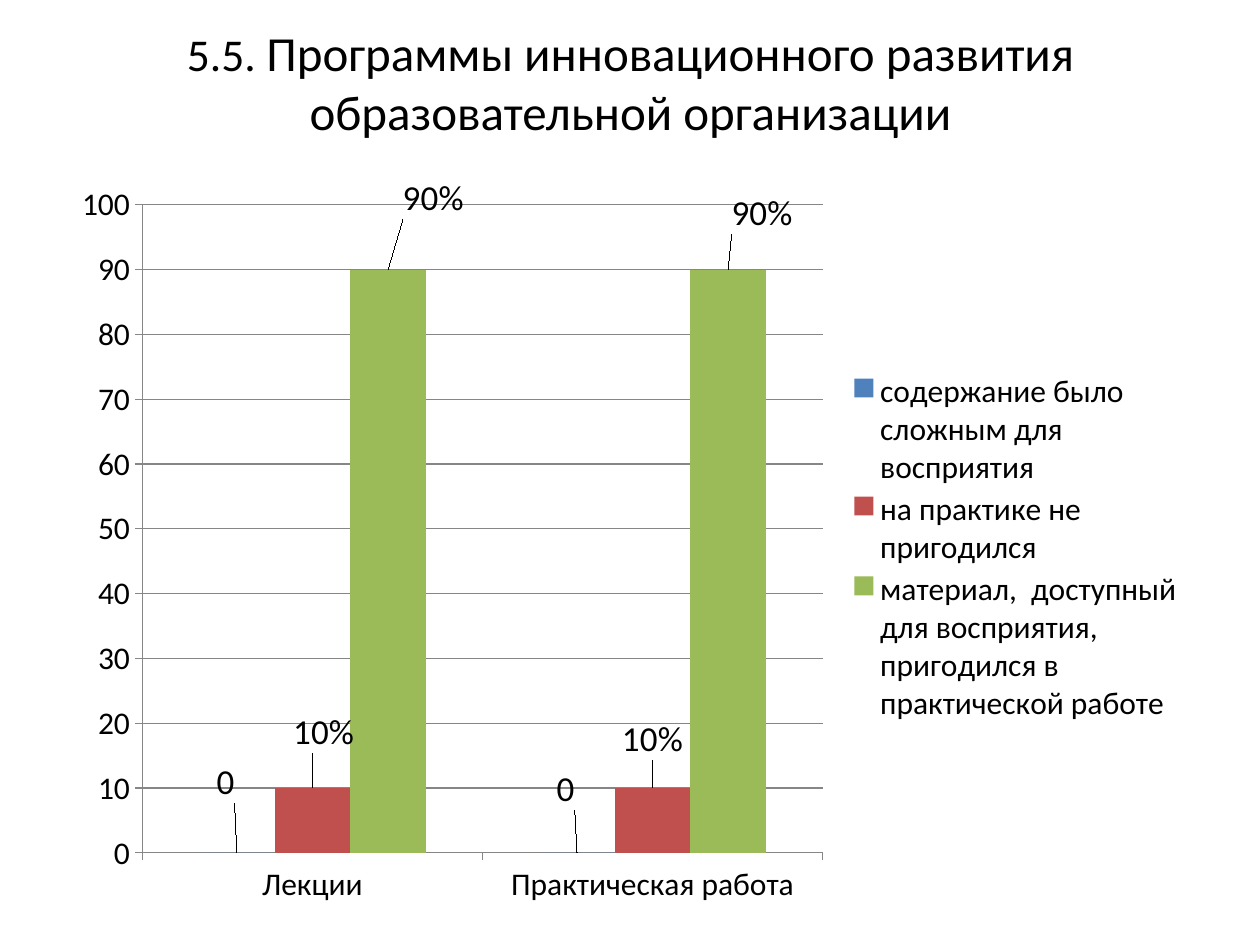
from lxml.etree import SubElement
from pptx import Presentation
from pptx.chart.data import CategoryChartData
from pptx.dml.color import RGBColor
from pptx.enum.chart import XL_CHART_TYPE as ChartType, XL_LABEL_POSITION as LabelPosition
from pptx.enum.chart import XL_LEGEND_POSITION as LegendPosition, XL_TICK_MARK as TickMark
from pptx.enum.text import MSO_ANCHOR as Anchor, PP_ALIGN as Align
from pptx.oxml import parse_xml
from pptx.oxml.ns import nsdecls, qn
from pptx.util import Pt

EMU_PER_PX = 914400 / 126
FONT = "Calibri"
COLORS = {
    "text": "000000",
    "line": "868686",
    "hard": "4F81BD",
    "unused": "C0504D",
    "useful": "9BBB59",
}
CATEGORIES = ["Лекции", "Практическая работа"]
# name, colour, values, label text, label shift per category (share of chart size)
SERIES = [
    ("содержание было сложным для восприятия", "hard", (0, 0), None,
     [(-0.01, -0.06), (-0.01, -0.05)]),
    ("на практике не пригодился", "unused", (10, 10), "10%",
     [(0.01, -0.04), (0, -0.03)]),
    ("материал,  доступный для восприятия, пригодился в практической работе",
     "useful", (90, 90), "90%", [(0.04, -0.06), (0.03, -0.04)]),
]


def px(*lengths):
    return [round(length * EMU_PER_PX) for length in lengths]


def color(name):
    return RGBColor.from_string(COLORS[name])


def format_font(font, size):
    font.name = FONT
    font.size = Pt(size)
    font.bold = False
    font.color.rgb = color("text")


def manual_layout(**settings):
    layout = parse_xml(f"<c:layout {nsdecls('c')}/>")
    manual = SubElement(layout, qn("c:manualLayout"))
    for tag, value in settings.items():
        SubElement(manual, qn(f"c:{tag}")).set("val", str(value))
    return layout


def replace_layout(parent, layout, after=None):
    for old in parent.findall(qn("c:layout")):
        parent.remove(old)
    if after is None:
        parent.insert(0, layout)
    else:
        parent.find(qn(after)).addnext(layout)


def add_title(slide):
    title = slide.shapes.title
    title.left, title.top, title.width, title.height = px(25, 38, 1211, 87)
    frame = title.text_frame
    frame.word_wrap = True
    frame.vertical_anchor = Anchor.MIDDLE
    paragraph = frame.paragraphs[0]
    paragraph.alignment = Align.CENTER
    for text, size in [
        ("5.5. ", 26),
        ("Программы инновационного развития образовательной организации", 28),
    ]:
        run = paragraph.add_run()
        run.text = text
        format_font(run.font, size)


def format_axes(chart):
    for axis in (chart.category_axis, chart.value_axis):
        axis.major_tick_mark = TickMark.OUTSIDE
        axis.minor_tick_mark = TickMark.NONE
        axis.format.line.color.rgb = color("line")
    value_axis = chart.value_axis
    value_axis.minimum_scale, value_axis.maximum_scale = 0, 100
    value_axis.major_unit = 10
    value_axis.has_major_gridlines = True
    value_axis.major_gridlines.format.line.color.rgb = color("line")


def format_labels(series, text, shifts):
    labels = series.data_labels
    labels.show_value = True
    format_font(labels.font, 20)
    for index, (x, y) in enumerate(shifts):
        label = series.points[index].data_label
        if text:
            run = label.text_frame.paragraphs[0].add_run()
            run.text = text
            format_font(run.font, 20)
        else:
            format_font(label.font, 20)
        label.position = LabelPosition.OUTSIDE_END
    # Move each label away from its default place
    for element, (x, y) in zip(labels._element.findall(qn("c:dLbl")), shifts):
        replace_layout(element, manual_layout(x=x, y=y), after="c:idx")


def add_chart(slide):
    data = CategoryChartData()
    data.categories = CATEGORIES
    for name, _, values, _, _ in SERIES:
        data.add_series(name, values)
    frame = slide.shapes.add_chart(
        ChartType.COLUMN_CLUSTERED, *px(63, 175, 1134, 745), data)
    chart = frame.chart
    chart.has_title = False
    format_font(chart.font, 18)
    format_axes(chart)

    # Columns
    plot = chart.plots[0]
    plot.gap_width = 150
    plot.overlap = 0
    plot.vary_by_categories = False
    for series, (_, fill, _, text, shifts) in zip(plot.series, SERIES):
        series.format.fill.solid()
        series.format.fill.fore_color.rgb = color(fill)
        format_labels(series, text, shifts)

    # Legend and plot area
    chart.has_legend = True
    legend = chart.legend
    legend.position = LegendPosition.RIGHT
    legend.include_in_layout = False
    replace_layout(
        legend._element,
        manual_layout(xMode="edge", yMode="edge", x=0.69, y=0.26, w=0.3, h=0.48),
        after="c:legendPos")
    replace_layout(
        chart._chartSpace.chart.plotArea,
        manual_layout(layoutTarget="inner", xMode="edge", yMode="edge",
                      x=0.07, y=0.04, w=0.6, h=0.87))


def main():
    presentation = Presentation()
    presentation.slide_width, presentation.slide_height = px(1260, 945)
    slide = presentation.slides.add_slide(presentation.slide_layouts[5])
    add_title(slide)
    add_chart(slide)
    presentation.save("out.pptx")


if __name__ == "__main__":
    main()
